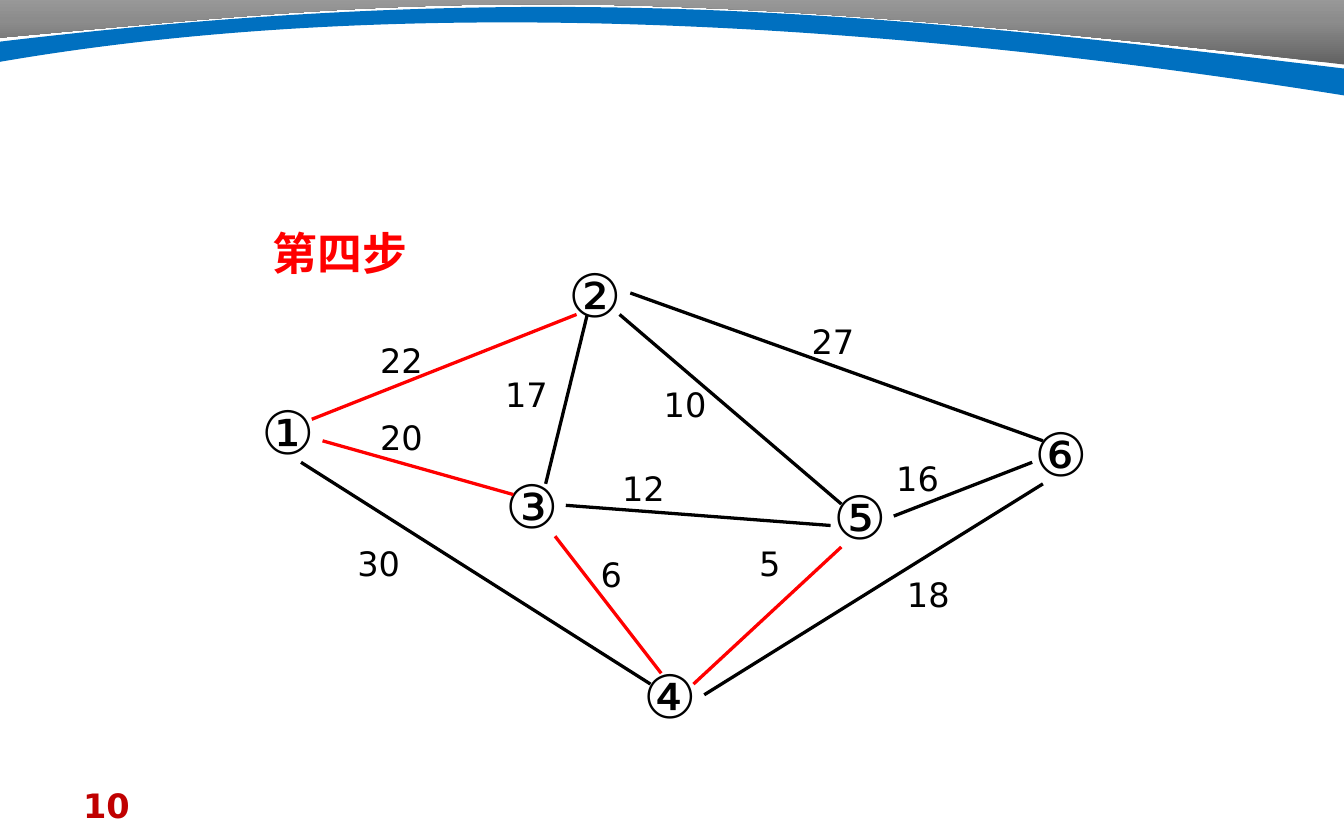
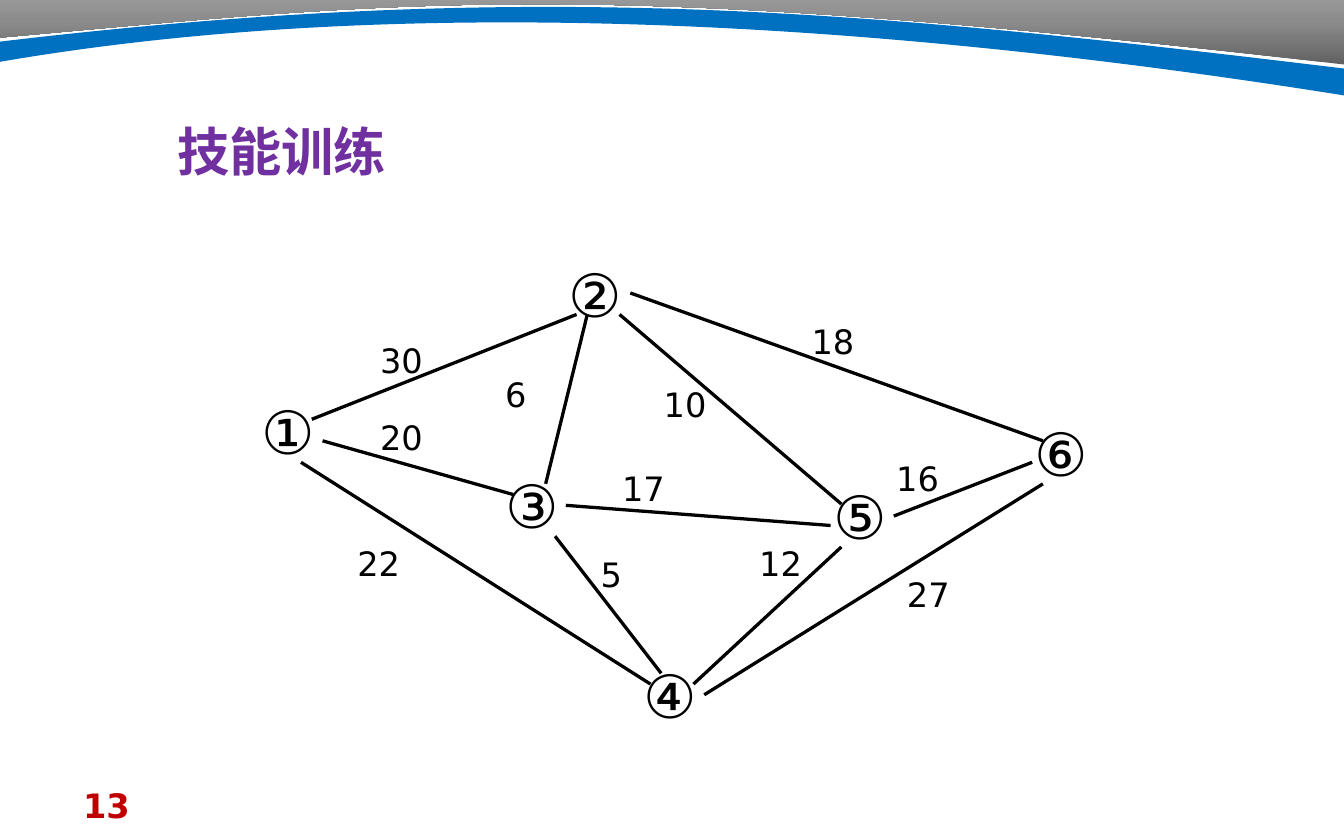
import copy

import lxml.etree
import pptx
import pptx.dml.color
import pptx.enum.shapes
import pptx.enum.text
import pptx.oxml.ns
import pptx.util

SCALE = 9144  # EMU in one px, 100 px to the inch
WIDE, HIGH = 1000, 625
LATIN, HAN = "DejaVu Sans", "Noto Sans CJK SC"
HUES = {
    "ink": "000000", "red": "FF0000", "plum": "7030A0", "page": "C00000",
    "blue": "0070C0", "white": "FFFFFF",
    "dark": "626262", "mid": "8C8C8C", "light": "A6A6A6",
}

# Outlines: a pair is a corner, a triple of pairs is a cubic curve
GREY = [(WIDE, 48), ((443, -17), (308, 0), (0, 28)),
        (0, 19), (0, -2), (WIDE, -2), (WIDE, 48)]
BLUE = [(0, 31), ((403, -17), (652, 9), (WIDE, 51)),
        (WIDE, 71), ((605, 8), (267, 0), (0, 46)), (0, 31)]

NODES = {"①": (185, 289), "②": (413, 187), "⑥": (760, 305),
         "③": (366, 344), "⑤": (610, 352), "④": (469, 485)}
# Edge: start, end, corner of its weight label
EDGES = {
    "1-4": ((224, 344), (484, 509), (256, 399)),
    "1-3": ((240, 328), (382, 368), (273, 305)),
    "3-4": ((413, 399), (492, 501), (437, 407)),
    "4-5": ((626, 407), (516, 509), (555, 399)),
    "4-6": ((776, 360), (524, 517), (665, 422)),
    "3-5": ((421, 376), (618, 391), (453, 343)),
    "5-6": ((665, 384), (768, 344), (657, 336)),
    "1-2": ((429, 234), (232, 312), (273, 248)),
    "2-3": ((437, 234), (406, 360), (366, 273)),
    "2-5": ((461, 234), (626, 375), (484, 281)),
    "2-6": ((469, 218), (776, 328), (594, 234)),
}
SLIDES = [
    dict(page="10", title="第四步", box=(193, 163, 370, 50), size=24, hue="red",
         costs=(30, 20, 6, 5, 18, 12, 16, 22, 17, 10, 27),
         chosen={"1-2", "1-3", "3-4", "4-5"}),
    dict(page="13", title="技能训练", box=(122, 84, 370, 57), size=28, hue="plum",
         costs=(22, 20, 5, 12, 27, 17, 16, 30, 6, 10, 18), chosen=set()),
]


def emu(*spans):
    return [round(span * SCALE) for span in spans]


def rgb(hue):
    return pptx.dml.color.RGBColor.from_string(HUES[hue])


def add(node, tag, **attrs):
    return lxml.etree.SubElement(node, pptx.oxml.ns.qn(tag), **attrs)


def bend(lines):
    """Merge three line segments into one cubic curve."""
    arc = lxml.etree.Element(pptx.oxml.ns.qn("a:cubicBezTo"))
    lines[0].addprevious(arc)
    for line in lines:
        arc.append(line[0])
        line.getparent().remove(line)


def write(shape, text, size=18, hue="ink", bold=False, face=LATIN, grow=True):
    """Fill a shape with one left-aligned, top-anchored line."""
    kinds = pptx.enum.text
    frame = shape.text_frame
    frame.word_wrap = True
    frame.vertical_anchor = kinds.MSO_ANCHOR.TOP
    fit = kinds.MSO_AUTO_SIZE
    frame.auto_size = fit.SHAPE_TO_FIT_TEXT if grow else fit.NONE
    para = frame.paragraphs[0]
    para.alignment = kinds.PP_ALIGN.LEFT
    run = para.add_run()
    run.text = text
    font = run.font
    font.size, font.bold, font.name = pptx.util.Pt(size), bold, face
    font.color.rgb = rgb(hue)
    add(run._r.get_or_add_rPr(), "a:ea", typeface=face)


class Deck:
    def __init__(self):
        self.show = pptx.Presentation()
        self.show.slide_width, self.show.slide_height = emu(WIDE, HIGH)
        self.layout = self.show.slide_layouts[5]
        self.slide = self.home = None

    def start(self):
        self.slide = self.show.slides.add_slide(self.layout)
        self.home = self.slide.shapes

    def group(self):
        """Send the shapes that follow into a new group."""
        self.home = self.slide.shapes.add_group_shape().shapes

    def title(self, text, box, **style):
        shape = self.slide.shapes.title
        shape.left, shape.top, shape.width, shape.height = emu(*box)
        write(shape, text, bold=True, face=HAN, **style)

    def label(self, text, box, **style):
        write(self.home.add_textbox(*emu(*box)), text, **style)

    def line(self, start, end, hue):
        kind = pptx.enum.shapes.MSO_CONNECTOR.STRAIGHT
        link = self.home.add_connector(kind, *emu(*start, *end))
        link.line.color.rgb = rgb(hue)
        link.line.width = pptx.util.Pt(1.75)
        add(link._element.spPr, "a:effectLst")

    def band(self, outline):
        """Draw an outline of corners and curves on the layout."""
        first, *parts = outline
        dots, bends = [], []
        for part in parts:
            if len(part) == 3:
                bends.append(len(dots))
                dots.extend(part)
            else:
                dots.append(part)
        pen = self.home.build_freeform(*emu(*first))
        pen.add_line_segments([emu(*dot) for dot in dots], close=True)
        shape = pen.convert_to_shape()
        lines = list(shape._element.iter(pptx.oxml.ns.qn("a:lnTo")))
        for spot in bends:
            bend(lines[spot:spot + 3])
        shape.line.fill.background()
        shape.shadow.inherit = False
        self.layout.shapes._spTree.append(shape._element)
        return shape

    def shade(self, shape):
        """Give a grey gradient and a white edge below."""
        fill = shape.fill
        fill.gradient()
        fill.gradient_angle = 90
        stops = shape._element.spPr.find(".//" + pptx.oxml.ns.qn("a:gsLst"))
        stops.insert(1, copy.deepcopy(stops[0]))
        for stop, hue, place in zip(fill.gradient_stops, ("dark", "mid", "light"), (0, 0.5, 1)):
            stop.color.rgb = rgb(hue)
            stop.position = place
        effects = shape._element.spPr.find(pptx.oxml.ns.qn("a:effectLst"))
        cast = add(effects, "a:outerShdw", blurRad="0", dist="25400",
                   dir="5400000", algn="t", rotWithShape="0")
        add(cast, "a:srgbClr", val=HUES["white"])

    def bands(self):
        self.shade(self.band(GREY))
        fill = self.band(BLUE).fill
        fill.solid()
        fill.fore_color.rgb = rgb("blue")

    def graph(self, costs, chosen):
        self.group()
        for mark, spot in NODES.items():
            self.label(mark, (*spot, 55, 64), size=32)
        for name, (start, end, _) in EDGES.items():
            self.line(start, end, "red" if name in chosen else "ink")
        for cost, (_, _, spot) in zip(costs, EDGES.values()):
            self.label(str(cost), (*spot, 79, 40))


def main():
    deck = Deck()
    for item in SLIDES:
        deck.start()
        if item is SLIDES[0]:
            deck.bands()
        deck.label(item["page"], (52, 579, 233, 33), hue="page", bold=True, grow=False)
        deck.title(item["title"], item["box"], size=item["size"], hue=item["hue"])
        deck.graph(item["costs"], item["chosen"])
    deck.show.save("out.pptx")


if __name__ == "__main__":
    main()
